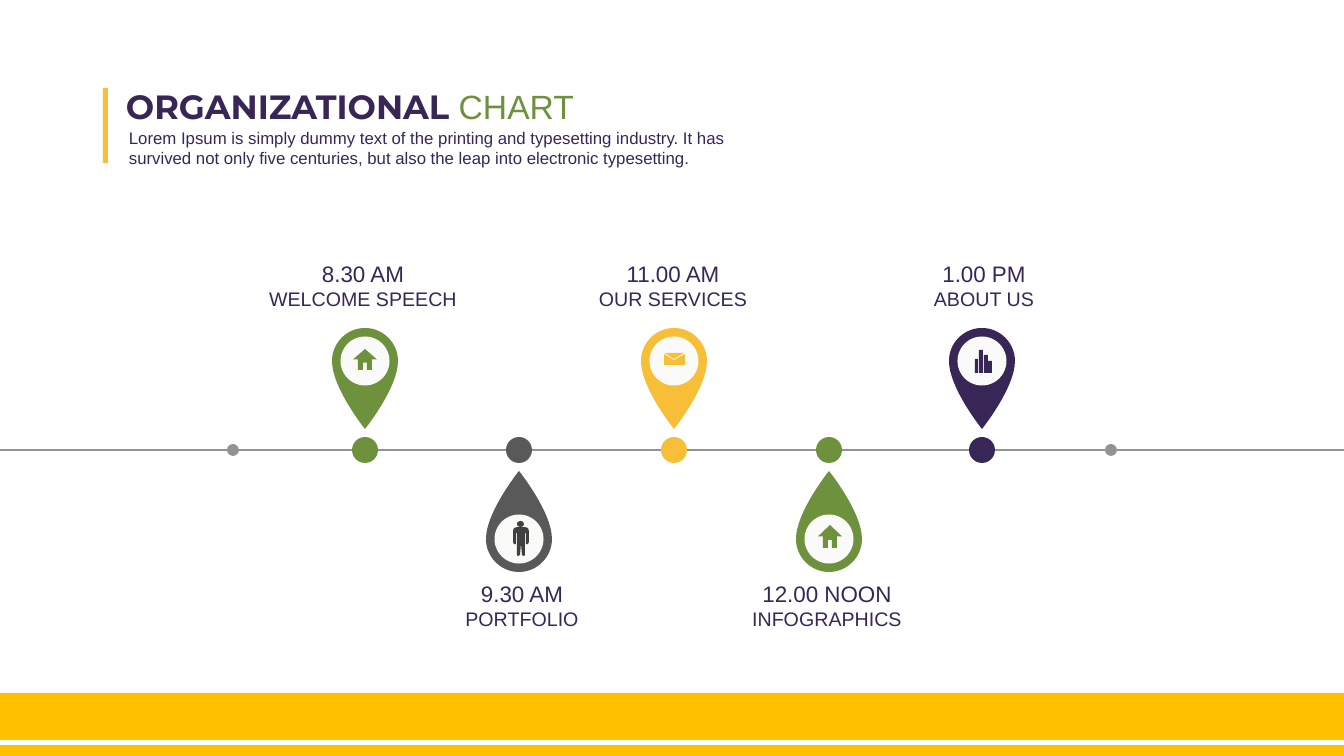
import pptx
import pptx.util
import pptx.dml.color
import pptx.enum.shapes
import pptx.enum.text
import pptx.oxml

SCALE = 914400 / 100.8  # EMU per px
SHAPES = pptx.enum.shapes.MSO_SHAPE
CENTER = pptx.enum.text.PP_ALIGN.CENTER
COLORS = {
    "green": "6E913E", "grey": "595959", "yellow": "F7BF37", "purple": "382656",
    "light grey": "939393", "dark": "404040", "disc": "FAFAF8",
    "footer": "FFC000", "white": "FFFFFF",
}
AXIS_Y = 450
PIN_RADIUS, PIN_TIP, PIN_OFFSET = 33, 68, 89


def emu(px):
    return pptx.util.Emu(round(px * SCALE))


def rgb(color):
    return pptx.dml.color.RGBColor.from_string(COLORS[color])


def paint(shape, color):
    shape.shadow.inherit = False
    shape.fill.solid()
    shape.fill.fore_color.rgb = rgb(color)
    shape.line.fill.background()


def add_block(slide, kind, left, top, width, height, color):
    shape = slide.shapes.add_shape(kind, emu(left), emu(top), emu(width), emu(height))
    paint(shape, color)


def add_dot(slide, x, y, size, color):
    add_block(slide, SHAPES.OVAL, x - size / 2, y - size / 2, size, size, color)


def add_outline(slide, x, y, points, color):
    """Draw a closed outline whose points are offsets from (x, y)."""
    corners = [(emu(x + dx), emu(y + dy)) for dx, dy in points]
    builder = slide.shapes.build_freeform(*corners[0], scale=1.0)
    builder.add_line_segments(corners[1:], close=True)
    paint(builder.convert_to_shape(), color)


def add_text(slide, left, top, width, height, lines, align=None, inset=True, wrap=False):
    """Each line is a list of (text, size, font, color, bold)."""
    box = slide.shapes.add_textbox(emu(left), emu(top), emu(width), emu(height))
    frame = box.text_frame
    frame.word_wrap = wrap
    if not inset:
        frame.margin_left = frame.margin_right = 0
        frame.margin_top = frame.margin_bottom = 0
    for index, spans in enumerate(lines):
        para = frame.paragraphs[0] if index == 0 else frame.add_paragraph()
        para.alignment = align
        for text, size, font, color, bold in spans:
            span = para.add_run()
            span.text = text
            target = para.font if len(spans) == 1 else span.font
            target.size = pptx.util.Pt(size)
            target.name = font
            target.bold = bold
            target.color.rgb = rgb(color)


def bezier(start, first, second, end, steps=16):
    for step in range(1, steps + 1):
        t = step / steps
        weights = ((1 - t) ** 3, 3 * t * (1 - t) ** 2, 3 * t * t * (1 - t), t ** 3)
        yield tuple(sum(w * p[axis] for w, p in zip(weights, (start, first, second, end)))
                    for axis in (0, 1))


def add_pin(slide, x, side, color):
    """Drop with its tip towards the axis; side is -1 above it and 1 below."""
    y, r, bend = AXIS_Y + side * PIN_OFFSET, PIN_RADIUS, PIN_RADIUS * 0.55
    half = [(0, -r), *bezier((0, -r), (bend, -r), (r, -bend), (r, 0)),
            *bezier((r, 0), (r, 27), (0, PIN_TIP), (0, PIN_TIP))]
    outline = half + [(-dx, dy) for dx, dy in half[-2:0:-1]]
    add_outline(slide, x, y, [(dx, -side * dy) for dx, dy in outline], color)
    add_dot(slide, x, y, 49, "disc")


def add_label(slide, x, top, time, name):
    lines = [[(time, 16, "Arial", "purple", False)], [(name, 14, "Arial", "purple", False)]]
    add_text(slide, x - 100, top, 200, 50, lines, CENTER, inset=False)


# Icons
def add_house(slide, x, top, height, color):
    half = [(12, height / 2), (7, height / 2), (7, height), (2, height), (2, height * 0.65)]
    points = [(0, 0)] + half + [(-dx, dy) for dx, dy in reversed(half)]
    add_outline(slide, x, top, points, color)


def add_person(slide, x, top, color):
    half = [(4, 0), (7, 1), (8, 4), (8, 15), (7, 17), (5, 17), (5, 6), (4, 6),
            (4, 28), (3, 29), (1, 28), (0, 16)]
    add_outline(slide, x, top, half + [(-dx, dy) for dx, dy in reversed(half)], color)
    add_block(slide, SHAPES.OVAL, x - 4, top - 6, 7, 6, color)


def add_envelope(slide, x, top, color):
    add_outline(slide, x, top, [(-9, 0), (10, 0), (0, 6)], color)
    add_outline(slide, x, top, [(0, 7), (-10, 1), (-10, 12), (11, 12), (11, 1)], color)


def add_bars(slide, left, bottom, color):
    for x, width, height in ((0, 3, 14), (4, 4, 23), (9, 4, 18), (13, 4, 12)):
        add_block(slide, SHAPES.RECTANGLE, left + x, bottom - height, width, height, color)


def main():
    deck = pptx.Presentation()
    deck.slide_width, deck.slide_height = emu(1344), emu(756)
    slide = deck.slides.add_slide(deck.slide_layouts[6])

    # Footer band
    add_block(slide, SHAPES.RECTANGLE, 0, 693, 1344, 63, "footer")
    add_block(slide, SHAPES.RECTANGLE, 0, 740, 1344, 5, "white")

    # Heading
    add_block(slide, SHAPES.RECTANGLE, 103, 88, 5, 75, "yellow")
    add_text(slide, 116, 81, 490, 50, [[
        ("ORGANIZATIONAL ", 24, "Montserrat", "purple", True),
        ("CHART", 24, "Arial", "green", False)]])
    add_text(slide, 119, 123, 679, 50, [[(
        "Lorem Ipsum is simply dummy text of the printing and typesetting industry. "
        "It has survived not only five centuries, but also the leap into electronic "
        "typesetting.", 12, "Arial", "purple", False)]], wrap=True)

    # Time axis
    axis = slide.shapes.add_connector(
        pptx.enum.shapes.MSO_CONNECTOR.STRAIGHT, 0, emu(AXIS_Y), emu(1344), emu(AXIS_Y))
    axis.line.color.rgb = rgb("light grey")
    axis.line.width = 0
    properties = axis._element.spPr
    properties.append(pptx.oxml.parse_xml(
        '<a:effectLst xmlns:a="http://schemas.openxmlformats.org/drawingml/2006/main"/>'))
    for x in (233, 1111):
        add_dot(slide, x, AXIS_Y, 12, "light grey")

    # Events: pin x, label x, side, colour, time, name
    events = [
        (365, 363, -1, "green", "8.30 AM", "WELCOME SPEECH"),
        (519, 522, 1, "grey", "9.30 AM", "PORTFOLIO"),
        (674, 673, -1, "yellow", "11.00 AM", "OUR SERVICES"),
        (829, 827, 1, "green", "12.00 NOON", "INFOGRAPHICS"),
        (982, 984, -1, "purple", "1.00 PM", "ABOUT US"),
    ]
    for x, label_x, side, color, time, name in events:
        add_dot(slide, x, AXIS_Y, 26, color)
        add_pin(slide, x, side, color)
        add_label(slide, label_x, 260 if side < 0 else 580, time, name)

    # Pin icons
    add_house(slide, 365, 349, 21, "green")
    add_person(slide, 521, 527, "dark")
    add_envelope(slide, 674, 353, "yellow")
    add_house(slide, 830, 525, 23, "green")
    add_bars(slide, 975, 373, "purple")

    deck.save("out.pptx")


if __name__ == "__main__":
    main()
